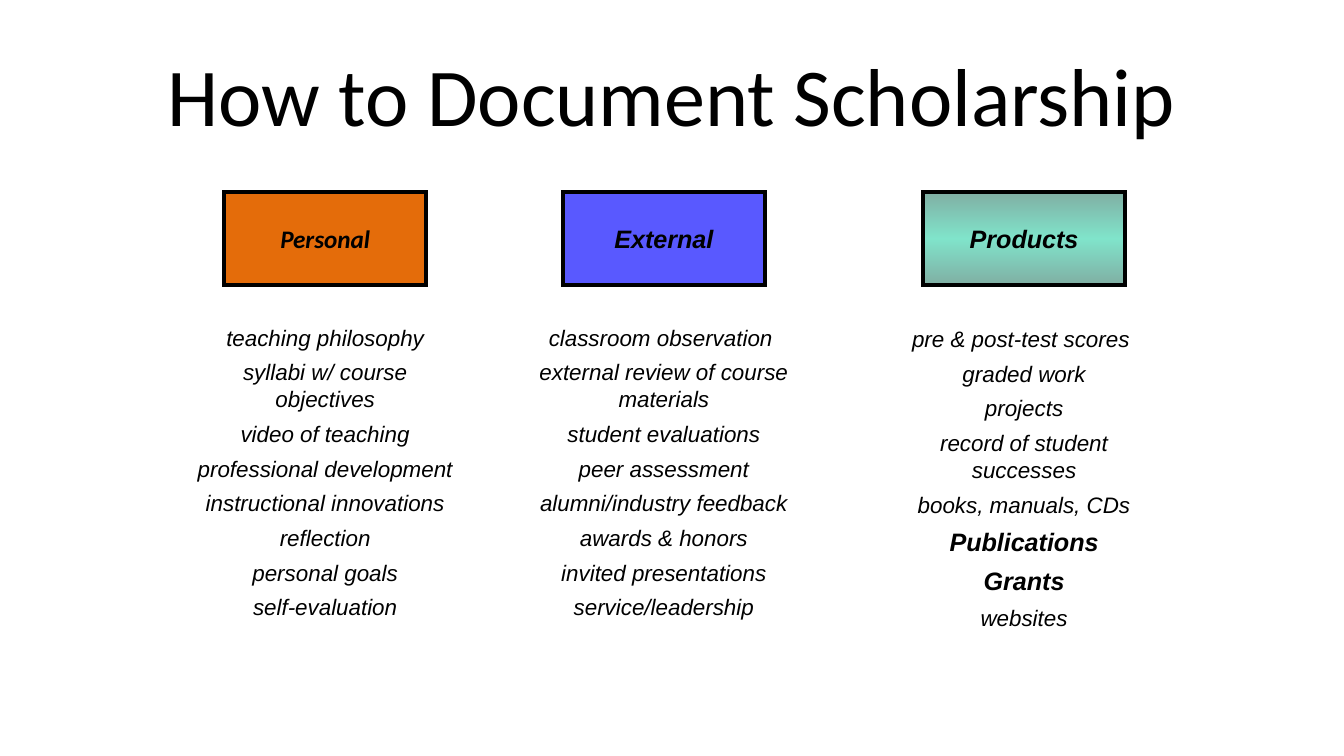
from lxml import etree
from pptx import Presentation
from pptx.dml.color import RGBColor
from pptx.enum.shapes import MSO_SHAPE
from pptx.enum.text import MSO_ANCHOR, MSO_AUTO_SIZE, PP_ALIGN
from pptx.oxml.ns import qn
from pptx.util import Inches, Pt

RECT = MSO_SHAPE.RECTANGLE
MIDDLE = MSO_ANCHOR.MIDDLE
CENTER = PP_ALIGN.CENTER
GROW = MSO_AUTO_SIZE.SHAPE_TO_FIT_TEXT

BLACK = RGBColor(0x00, 0x00, 0x00)
ORANGE = RGBColor(0xE4, 0x6C, 0x0A)
BLUE = RGBColor(0x00, 0x00, 0xFF)
GREEN = RGBColor(0x00, 0xCC, 0x99)
DARK = RGBColor(0x00, 0x5E, 0x47)

STRONG = ("Publications", "Grants")
PERSONAL = (
    "teaching philosophy", "syllabi w/ course objectives",
    "video of teaching", "professional development",
    "instructional innovations", "reflection",
    "personal goals", "self-evaluation",
)
EXTERNAL = (
    "classroom observation ", "external review of course materials",
    "student evaluations", "peer assessment",
    "alumni/industry feedback", "awards & honors",
    "invited presentations", "service/leadership",
)
PRODUCTS = (
    "pre & post-test scores ", "graded work", "projects",
    "record of student successes", "books, manuals, CDs",
    *STRONG, "websites",
)


def style(para, size, face="Arial", bold=False, italic=True):
    """Centre a paragraph and format its runs."""
    para.alignment = CENTER
    for run in para.runs:
        font = run.font
        font.size, font.name = Pt(size), face
        font.bold, font.italic = bold, italic
        font.color.rgb = BLACK


def fade(color, percent):
    """Set the opacity of a colour element."""
    etree.SubElement(color, qn("a:alpha")).set("val", str(percent * 1000))


def paint_solid(shape, color, percent=100):
    """Fill a shape with one colour at the given opacity."""
    shape.fill.solid()
    shape.fill.fore_color.rgb = color
    if percent < 100:
        fade(shape.fill._xPr.find(".//" + qn("a:srgbClr")), percent)


def paint_bands(shape, colors, percent):
    """Fill a shape with evenly spaced vertical gradient stops."""
    shape.fill.gradient()
    shape.fill.gradient_angle = 90
    stops = shape.fill._xPr.find(".//" + qn("a:gsLst"))
    for stop in list(stops):
        stops.remove(stop)
    for i, color in enumerate(colors):
        stop = etree.SubElement(stops, qn("a:gs"))
        stop.set("pos", str(100000 * i // (len(colors) - 1)))
        tint = etree.SubElement(stop, qn("a:srgbClr"))
        tint.set("val", str(color))
        fade(tint, percent)


def add_title(slide, text):
    """Add the slide title."""
    box = slide.shapes.add_textbox(Inches(0.5), Inches(0.23), Inches(9), Inches(0.94))
    frame = box.text_frame
    frame.word_wrap, frame.vertical_anchor = True, MIDDLE
    frame.text = text
    style(frame.paragraphs[0], 44, "Calibri", italic=False)


def add_head(slide, left, text, face="Arial"):
    """Add a sharp-cornered column heading and return it."""
    head = slide.shapes.add_shape(RECT, Inches(left), Inches(1.43), Inches(1.5), Inches(0.69))
    head.shadow.inherit = False
    head.line.color.rgb = BLACK
    head.line.width = Pt(2.25)
    edge = head.line.fill._xPr
    etree.SubElement(edge, qn("a:miter")).set("lim", "800000")
    frame = head.text_frame
    frame.word_wrap, frame.vertical_anchor = False, MIDDLE
    frame.text = text
    style(frame.paragraphs[0], 13.5, face, bold=True)
    return head


def add_list(slide, left, top, height, items):
    """Add a centred list of examples."""
    box = slide.shapes.add_textbox(Inches(left), Inches(top), Inches(2.12), Inches(height))
    frame = box.text_frame
    frame.word_wrap, frame.auto_size = True, GROW
    frame.text = "\n".join(items)
    for i, para in enumerate(frame.paragraphs):
        bold = para.text in STRONG
        size = 13.5 if bold else 12
        style(para, size, bold=bold)
        if i:
            para.space_before = Pt(0.35 * size)


def main():
    """Build and save the slide."""
    deck = Presentation()
    deck.slide_width = Inches(10)
    deck.slide_height = Inches(10) * 9 // 16
    slide = deck.slides.add_slide(deck.slide_layouts[6])
    paint_solid(add_head(slide, 1.67, "Personal", "Calibri"), ORANGE)
    paint_bands(add_head(slide, 6.87, "Products"), (DARK, GREEN, DARK), 50)
    paint_solid(add_head(slide, 4.19, "External"), BLUE, 65)
    add_list(slide, 1.36, 2.36, 2.41, PERSONAL)
    add_list(slide, 3.88, 2.36, 2.41, EXTERNAL)
    add_list(slide, 6.56, 2.37, 2.48, PRODUCTS)
    add_title(slide, "How to Document Scholarship")
    deck.save("out.pptx")


if __name__ == "__main__":
    main()
